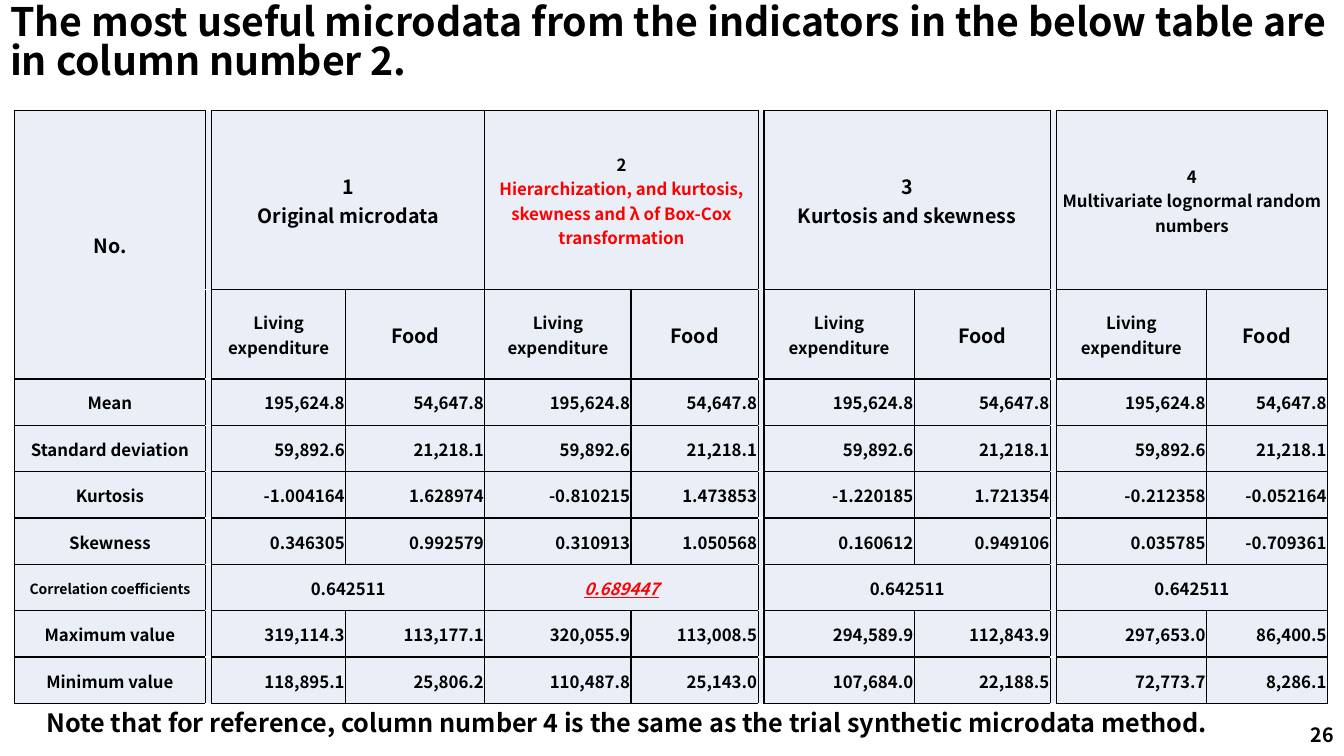
"""Build a slide comparing indicators of four sets of microdata."""
import dataclasses

import pptx
import pptx.dml.color
import pptx.enum.text
import pptx.oxml
import pptx.oxml.ns
import pptx.util

PX = 9144
FONT = "Noto Sans CJK JP"
COLORS = {"text": "000000", "accent": "FF0000", "cell": "EAEFF7", "gap": "FFFFFF"}
ALIGN = pptx.enum.text.PP_ALIGN
ANCHOR = pptx.enum.text.MSO_ANCHOR

COL_WIDTHS = (190, 5, 133, 138, 145, 126, 5, 149, 135, 5, 149, 120)
ROW_HEIGHTS = (177, 89) + (46,) * 7
GAP_COLS = (1, 6, 9)
HEAVY_COLS = (4, 5)
LABELS = ("Mean", "Standard deviation", "Kurtosis", "Skewness",
          "Correlation coefficients", "Maximum value", "Minimum value")
CORRELATION_ROW = 6


@dataclasses.dataclass(frozen=True)
class Microdata:
    """One numbered set of microdata and its indicators."""
    number: str
    name: str
    col: int
    size: int
    living: tuple[str, ...]
    food: tuple[str, ...]
    correlation: str
    highlighted: bool = False


MICRODATA = (
    Microdata("1", "Original microdata", 2, 14,
              ("195,624.8", "59,892.6", "-1.004164", "0.346305", "319,114.3", "118,895.1"),
              ("54,647.8", "21,218.1", "1.628974", "0.992579", "113,177.1", "25,806.2"),
              "0.642511"),
    Microdata("2", "Hierarchization, and kurtosis, skewness and λ of Box-Cox transformation", 4, 12,
              ("195,624.8", "59,892.6", "-0.810215", "0.310913", "320,055.9", "110,487.8"),
              ("54,647.8", "21,218.1", "1.473853", "1.050568", "113,008.5", "25,143.0"),
              "0.689447", True),
    Microdata("3", "Kurtosis and skewness", 7, 14,
              ("195,624.8", "59,892.6", "-1.220185", "0.160612", "294,589.9", "107,684.0"),
              ("54,647.8", "21,218.1", "1.721354", "0.949106", "112,843.9", "22,188.5"),
              "0.642511"),
    Microdata("4", "Multivariate lognormal random numbers", 10, 12,
              ("195,624.8", "59,892.6", "-0.212358", "0.035785", "297,653.0", "72,773.7"),
              ("54,647.8", "21,218.1", "-0.052164", "-0.709361", "86,400.5", "8,286.1"),
              "0.642511"),
)


def style(p, size: int, align=ALIGN.LEFT, color: str = "text") -> None:
    """Format a paragraph in the bold slide font."""
    p.alignment = align
    p.font.name = FONT
    p.font.size = pptx.util.Pt(size)
    p.font.bold = True
    p.font.color.rgb = pptx.dml.color.RGBColor.from_string(COLORS[color])


def place(sp, x: int, y: int, w: int, h: int) -> None:
    """Move and size a shape in px."""
    sp.left, sp.top, sp.width, sp.height = x * PX, y * PX, w * PX, h * PX


def add_text(s, text: str, box: tuple[int, int, int, int], size: int,
             align=ALIGN.LEFT, anchor=ANCHOR.TOP) -> None:
    """Add a wrapped one-paragraph text box."""
    tf = s.shapes.add_textbox(*(v * PX for v in box)).text_frame
    tf.word_wrap = True
    tf.vertical_anchor = anchor
    tf.text = text
    style(tf.paragraphs[0], size, align)


def add_border(cell, side: str, color: str, points: float) -> None:
    """Draw one side of a cell."""
    cell._tc.get_or_add_tcPr().append(pptx.oxml.parse_xml(
        f'<a:ln{side} {pptx.oxml.ns.nsdecls("a")} w="{pptx.util.Pt(points)}">'
        f'<a:solidFill><a:srgbClr val="{COLORS[color]}"/></a:solidFill></a:ln{side}>'))


def format_cell(cell, row: int, col: int) -> None:
    """Set the borders, fill and margins that belong to a grid position."""
    heavy_side = {1: "B", 2: "T"}.get(row) if col in HEAVY_COLS else None
    for side in "LRTB":
        color = "gap" if col in GAP_COLS and side in "TB" else "text"
        add_border(cell, side, color, 2.25 if side == heavy_side else 1)
    cell.fill.solid()
    cell.fill.fore_color.rgb = pptx.dml.color.RGBColor.from_string(COLORS["cell"])
    cell.margin_left = cell.margin_right = cell.margin_top = PX
    cell.margin_bottom = 0
    cell.vertical_anchor = ANCHOR.MIDDLE


def write(cell, text: str, size: int = 12, align=ALIGN.CENTER, color: str = "text"):
    """Fill a cell with one paragraph and return it."""
    cell.text = text
    p = cell.text_frame.paragraphs[0]
    style(p, size, align, color)
    return p


def fill_microdata(table, data: Microdata) -> None:
    """Write the two columns of one set of microdata."""
    color = "accent" if data.highlighted else "text"
    for row in (0, CORRELATION_ROW):
        table.cell(row, data.col).merge(table.cell(row, data.col + 1))
    heading = table.cell(0, data.col)
    write(heading, data.number, data.size)
    p = heading.text_frame.add_paragraph()
    p.text = data.name
    style(p, data.size, ALIGN.CENTER, color)

    p = write(table.cell(CORRELATION_ROW, data.col), data.correlation, color=color)
    if data.highlighted:
        p.font.italic = p.font.underline = True

    value_rows = [r for r in range(2, len(ROW_HEIGHTS)) if r != CORRELATION_ROW]
    columns = (("Living expenditure", 12, data.living), ("Food", 14, data.food))
    for col, (title, size, values) in enumerate(columns, data.col):
        write(table.cell(1, col), title, size)
        for row, value in zip(value_rows, values):
            write(table.cell(row, col), value, align=ALIGN.RIGHT)


def add_indicator_table(s) -> None:
    """Add the table of indicators."""
    table = s.shapes.add_table(len(ROW_HEIGHTS), len(COL_WIDTHS), 14 * PX, 110 * PX,
                               sum(COL_WIDTHS) * PX, sum(ROW_HEIGHTS) * PX).table
    table.first_row = table.horz_banding = False
    for col, width in enumerate(COL_WIDTHS):
        table.columns[col].width = width * PX
    for row, height in enumerate(ROW_HEIGHTS):
        table.rows[row].height = height * PX
        for col in range(len(COL_WIDTHS)):
            format_cell(table.cell(row, col), row, col)
    table.cell(0, 0).merge(table.cell(1, 0))
    write(table.cell(0, 0), "No.", 14)
    for row, label in enumerate(LABELS, 2):
        write(table.cell(row, 0), label, 10 if row == CORRELATION_ROW else 12)
    for data in MICRODATA:
        fill_microdata(table, data)


def main() -> None:
    """Build and save the slide."""
    prs = pptx.Presentation()
    prs.slide_width, prs.slide_height = 1333 * PX, 750 * PX
    s = prs.slides.add_slide(prs.slide_layouts[5])
    title = s.shapes.title
    place(title, 0, 0, 1333, 101)
    tf = title.text_frame
    tf.text = "The most useful microdata from the indicators in the below table are in column number 2."
    tf.word_wrap = True
    tf.auto_size = pptx.enum.text.MSO_AUTO_SIZE.NONE
    tf.vertical_anchor = ANCHOR.TOP
    style(tf.paragraphs[0], 28)
    tf.paragraphs[0].line_spacing = 0.83
    add_text(s, "26", (1033, 709, 300, 40), 14, ALIGN.RIGHT, ANCHOR.MIDDLE)
    add_indicator_table(s)
    add_text(s, "Note that for reference, column number 4 is the same as the trial "
             "synthetic microdata method.", (36, 697, 1259, 40), 18)
    prs.save("out.pptx")


if __name__ == "__main__":
    main()
